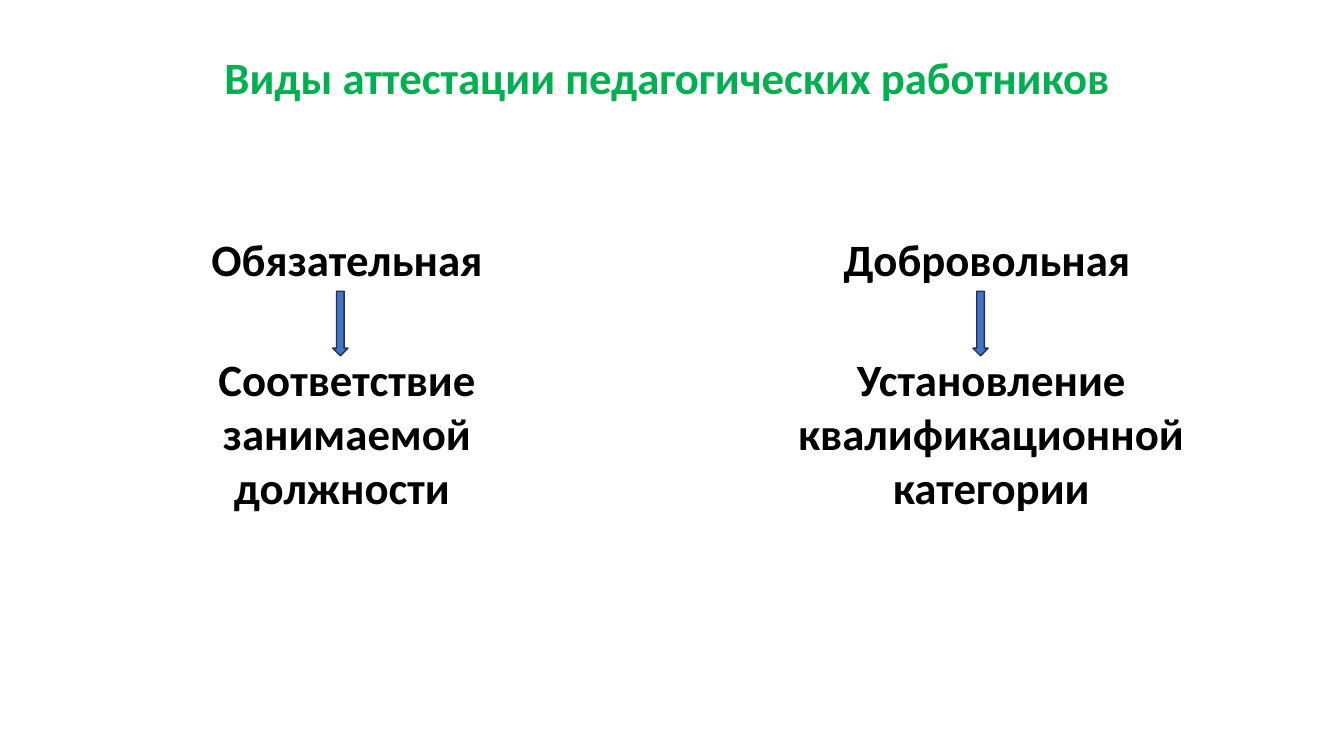
from pptx import Presentation
from pptx import util as u
from pptx.dml.color import RGBColor
from pptx.enum import shapes, text

GREEN = RGBColor(0x00, 0xB0, 0x50)
BLACK = RGBColor(0x00, 0x00, 0x00)
BLUE = RGBColor(0x44, 0x72, 0xC4)
NAVY = RGBColor(0x1E, 0x32, 0x56)

LINE_HEIGHT = 8.53
KIND_TOP, ARROW_TOP, PURPOSE_TOP = 30, 38.53, 45.87
PURPOSE_WIDTH, PURPOSE_HEIGHT = 35, 22.93
ARROW_WIDTH = 1.13


class AttestationSlide:
    font_name = "Calibri"
    font_size = u.Pt(32)

    def __init__(self, deck):
        self.column = deck.slide_width / 100
        self.row = deck.slide_height / 100
        self.page = deck.slides.add_slide(deck.slide_layouts[5])

    def place(self, left, top, width, height):
        return (round(left * self.column), round(top * self.row),
                round(width * self.column), round(height * self.row))

    def set_words(self, box, words, color):
        frame = box.text_frame
        frame.word_wrap = True
        frame.auto_size = text.MSO_AUTO_SIZE.SHAPE_TO_FIT_TEXT
        frame.vertical_anchor = text.MSO_ANCHOR.TOP
        para = frame.paragraphs[0]
        para.text = words
        para.alignment = text.PP_ALIGN.CENTER
        para.font.name = self.font_name
        para.font.size = self.font_size
        para.font.bold = True
        para.font.color.rgb = color

    def title(self, words, left, top, width, height):
        box = self.page.shapes.title
        box.left, box.top, box.width, box.height = self.place(left, top, width, height)
        self.set_words(box, words, GREEN)

    def label(self, words, left, top, width, height):
        box = self.page.shapes.add_textbox(*self.place(left, top, width, height))
        self.set_words(box, words, BLACK)

    def arrow(self, left, top, width, height):
        arrow = self.page.shapes.add_shape(
            shapes.MSO_SHAPE.DOWN_ARROW, *self.place(left, top, width, height))
        arrow.shadow.inherit = False
        arrow.fill.solid()
        arrow.fill.fore_color.rgb = BLUE
        arrow.line.color.rgb = NAVY
        arrow.line.width = u.Pt(1)


def main():
    deck = Presentation()
    deck.slide_width, deck.slide_height = u.Inches(13.33), u.Inches(7.5)
    slide = AttestationSlide(deck)
    slide.title("Виды аттестации педагогических работников", 12.23, 5.87, 74.87, LINE_HEIGHT)

    branches = [
        ("Обязательная", 8.33, 35, 24.76,
         "Соответствие занимаемой должности ", 8.33),
        ("Добровольная ", 57.69, 32.26, 72.39,
         "Установление квалификационной категории", 56.26),
    ]
    for kind, kind_left, kind_width, arrow_left, purpose, purpose_left in branches:
        slide.label(kind, kind_left, KIND_TOP, kind_width, LINE_HEIGHT)
        slide.label(purpose, purpose_left, PURPOSE_TOP, PURPOSE_WIDTH, PURPOSE_HEIGHT)
        slide.arrow(arrow_left, ARROW_TOP, ARROW_WIDTH, LINE_HEIGHT)

    deck.save("out.pptx")


if __name__ == "__main__":
    main()
